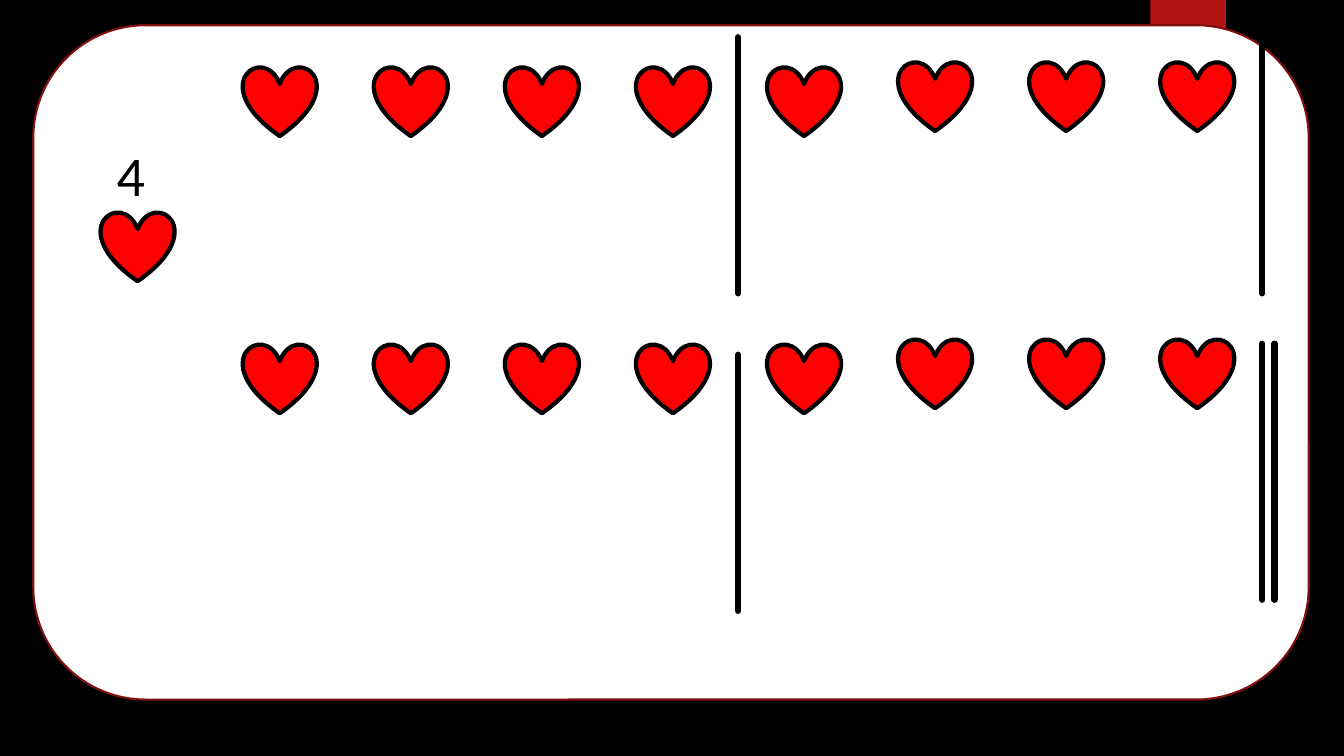
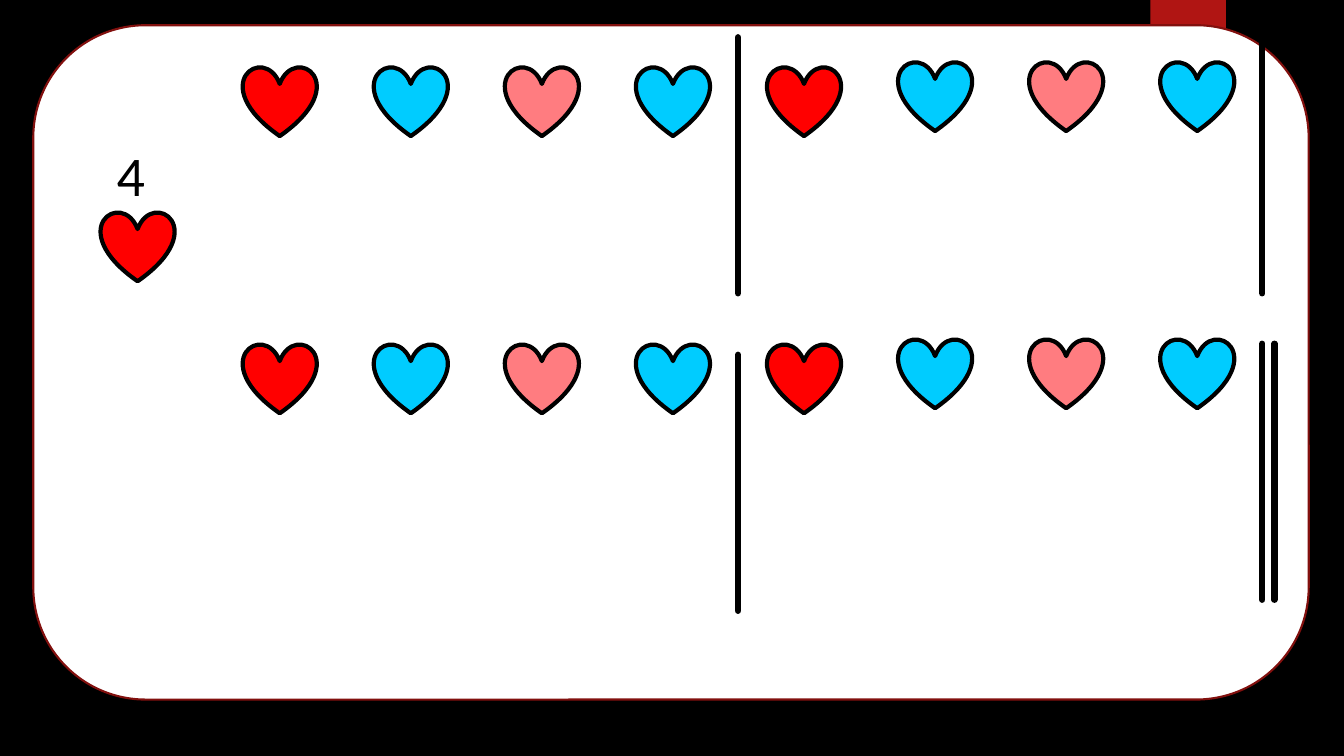
from itertools import cycle, islice
from pptx import Presentation
from pptx.dml.color import RGBColor
from pptx.enum.shapes import MSO_CONNECTOR, MSO_SHAPE
from pptx.oxml.ns import qn
from pptx.oxml.xmlchemy import OxmlElement
from pptx.util import Inches, Pt

BLACK, WHITE, RED = "000000", "FFFFFF", "FF0000"
BLUE, PINK = "00CCFF", "FF7C80"
TAB_RED, CARD_EDGE = "B01513", "82100E"

CARD = (0.33, 0.25, 12.65, 6.69)
TAB = (11.41, 0, 0.75, 1.25)
HEART_SIZE = (0.73, 0.69)
BEATS_PER_ROW = 8
BEAT_STEP = 1.3
BAR_HEIGHT = 2.54

# Row origin, then bar lines as (x, y) offsets from that origin
ROWS = [
    ((2.41, 0.66), [(4.91, -0.29), (10.11, -0.29)]),
    ((2.41, 3.41), [(4.91, 0.11), (10.11, 0), (10.23, 0)]),
]


def color(value):
    return RGBColor.from_string(value)


def add_shape(page, kind, box, fill, edge=None, width=0):
    shape = page.shapes.add_shape(kind, *map(Inches, box))
    shape.shadow.inherit = False
    shape.fill.solid()
    shape.fill.fore_color.rgb = color(fill)
    if edge:
        shape.line.color.rgb = color(edge)
        shape.line.width = Pt(width)
    else:
        shape.line.fill.background()
    return shape


def add_heart(page, left, top, fill):
    add_shape(page, MSO_SHAPE.HEART, (left, top, *HEART_SIZE), fill, BLACK, 3)


def add_bar_line(page, x, top):
    bar = page.shapes.add_connector(
        MSO_CONNECTOR.STRAIGHT,
        Inches(x), Inches(top), Inches(x), Inches(top + BAR_HEIGHT))
    bar.line.color.rgb = color(BLACK)
    bar.line.width = Pt(4.5)
    properties = bar._element.spPr
    properties.find(qn("a:ln")).set("cap", "rnd")
    properties.append(OxmlElement("a:effectLst"))


def add_meter(page, left, top):
    """Beat count above a heart."""
    box = page.shapes.add_textbox(
        Inches(left + 0.06), Inches(top), Inches(0.67), Inches(0.78))
    box.text_frame.word_wrap = True
    para = box.text_frame.paragraphs[0]
    para.text = "4"
    para.font.size = Pt(40)
    para.font.name = "Calibri"
    para.font.color.rgb = color(BLACK)
    add_heart(page, left, top + 0.76, RED)


def add_row(page, origin, bars, beat_colors):
    left, top = origin
    for beat, fill in enumerate(islice(cycle(beat_colors), BEATS_PER_ROW)):
        # The last three hearts sit slightly higher
        lift = 0.05 if beat >= 5 else 0
        add_heart(page, left + beat * BEAT_STEP, top - lift, fill)
    for x, y in bars:
        add_bar_line(page, left + x, top + y)


def add_rhythm_slide(deck, beat_colors):
    page = deck.slides.add_slide(deck.slide_layouts[6])
    # Background, tab and card
    page.background.fill.solid()
    page.background.fill.fore_color.rgb = color(BLACK)
    add_shape(page, MSO_SHAPE.RECTANGLE, TAB, TAB_RED)
    add_shape(page, MSO_SHAPE.ROUNDED_RECTANGLE, CARD, WHITE, CARD_EDGE, 1.5)
    # Meter and rows of beats
    add_meter(page, 1, 1.34)
    for origin, bars in ROWS:
        add_row(page, origin, bars, beat_colors)


def main():
    deck = Presentation()
    deck.slide_width, deck.slide_height = Inches(13.33), Inches(7.5)
    for beat_colors in ([RED], [RED, BLUE, PINK, BLUE]):
        add_rhythm_slide(deck, beat_colors)
    deck.save("out.pptx")


if __name__ == "__main__":
    main()
